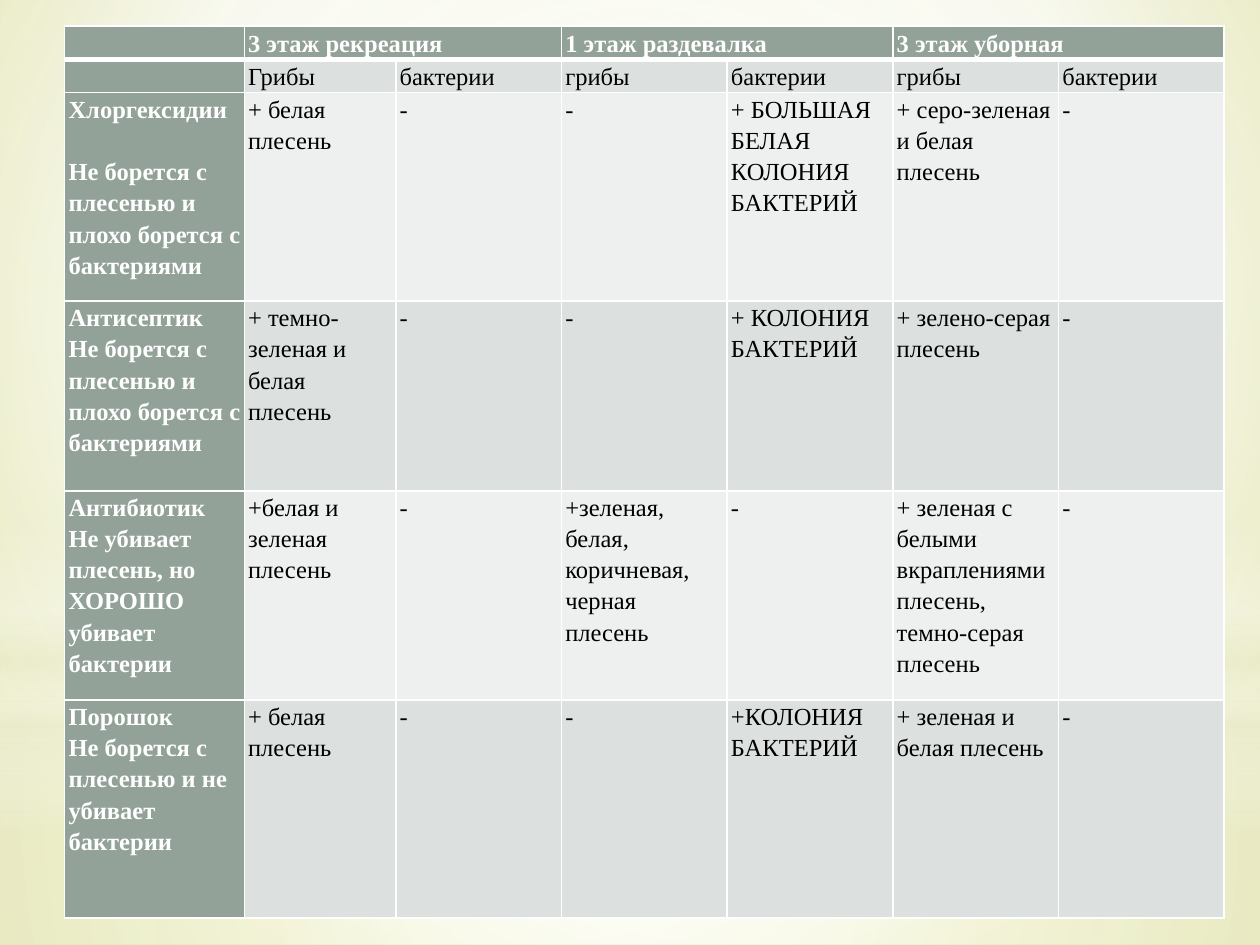
import pptx
import pptx.dml.color
import pptx.enum.shapes
import pptx.oxml
import pptx.oxml.ns
import pptx.util

Pt = pptx.util.Pt
qn = pptx.oxml.ns.qn
SHAPES = pptx.enum.shapes.MSO_SHAPE

WHITE, BLACK, SAGE, CREAM = "FFFFFF", "000000", "93A299", "ECEDD1"
BANDS = ["DCE0DE", "EEF0EF"]
FONT = "Times New Roman"
CENTRE = (50, 50, 50, 50)
MARGINS = {"margin_left": Pt(2.2), "margin_right": Pt(2.2), "margin_top": 0, "margin_bottom": 0}

COLUMN_WIDTHS = [102.6, 86.6] + [94.7] * 5
ROW_HEIGHTS = [19, 19, 119, 108.5, 119.5, 124.5]
PLACES = ["3 этаж рекреация", "1 этаж раздевалка", "3 этаж уборная"]
RESULTS = [
    ["", "Грибы", "бактерии", "грибы", "бактерии", "грибы", "бактерии"],
    ["Хлоргексидии\nНе борется с плесенью и плохо борется с бактериями",
     "+ белая плесень", "-", "-", "+ БОЛЬШАЯ БЕЛАЯ КОЛОНИЯ БАКТЕРИЙ",
     "+ серо-зеленая и белая плесень", "-"],
    ["Антисептик\nНе борется с плесенью и плохо борется с бактериями",
     "+ темно-зеленая и белая плесень", "-", "-", "+ КОЛОНИЯ БАКТЕРИЙ",
     "+ зелено-серая плесень", "-"],
    ["Антибиотик\nНе убивает плесень, но ХОРОШО убивает бактерии",
     "+белая и зеленая плесень", "-", "+зеленая, белая, коричневая, черная плесень", "-",
     "+ зеленая с белыми вкраплениями плесень, темно-серая плесень", "-"],
    ["Порошок\nНе борется с плесенью и не убивает бактерии",
     "+ белая плесень", "-", "-", "+КОЛОНИЯ БАКТЕРИЙ", "+ зеленая и белая плесень", "-"],
]
GLOWS = [
    (SHAPES.RECTANGLE, 402, 138,
     [(0, WHITE, 91), (37, WHITE, 76), (100, CREAM, 79)], CENTRE),
    (SHAPES.RECTANGLE, 0, 402,
     [(0, WHITE, 89), (48, WHITE, 62), (100, CREAM, 79)], CENTRE),
    (SHAPES.RECTANGLE, 297, 180,
     [(0, WHITE, 0), (29, WHITE, 30), (45, CREAM, 40), (55, WHITE, 26),
      (65, CREAM, 60), (100, WHITE, 0)], None),
    (SHAPES.OVAL, 126, 402, [(0, WHITE, 100), (56, WHITE, 0)], CENTRE),
]


def rgb(value):
    return pptx.dml.color.RGBColor.from_string(value)


def apply_format(target, values):
    for name, value in values.items():
        setattr(target, name, value)


def drawing_xml(tag, attributes, content):
    return pptx.oxml.parse_xml(
        f'<a:{tag} {pptx.oxml.ns.nsdecls("a")} {attributes}>{content}</a:{tag}>')


def set_gradient(fill, holder, stops, focus):
    fill.solid()
    stop_xml = "".join(
        f'<a:gs pos="{position * 1000}"><a:srgbClr val="{colour}">'
        f'<a:alpha val="{opacity * 1000}"/></a:srgbClr></a:gs>'
        for position, colour, opacity in stops)
    if focus:
        sides = " ".join(f'{side}="{share * 1000}"' for side, share in zip("ltrb", focus))
        direction = f'<a:path path="circle"><a:fillToRect {sides}/></a:path>'
    else:
        direction = '<a:lin ang="5400000" scaled="0"/>'
    gradient = drawing_xml("gradFill", 'rotWithShape="1"',
                           f"<a:gsLst>{stop_xml}</a:gsLst>{direction}")
    holder.replace(holder.find(qn("a:solidFill")), gradient)


def add_glow(slide, outline, top, height, stops, focus):
    glow = slide.shapes.add_shape(outline, 0, Pt(top), Pt(720), Pt(height))
    glow.shadow.inherit = False
    glow.line.fill.background()
    set_gradient(glow.fill, glow.element.spPr, stops, focus)


def set_borders(cell, top, bottom):
    properties = cell._tc.get_or_add_tcPr()
    widths = {"lnL": 1, "lnR": 1, "lnT": top, "lnB": bottom}
    for index, (side, width) in enumerate(widths.items()):
        properties.insert(index, drawing_xml(
            side, f'w="{Pt(width)}"',
            f'<a:solidFill><a:srgbClr val="{WHITE}"/></a:solidFill>'))


def write_cell(cell, text, fill, emphasised):
    apply_format(cell, MARGINS)
    cell.fill.solid()
    cell.fill.fore_color.rgb = rgb(fill)
    cell.text = text
    for paragraph in cell.text_frame.paragraphs:
        paragraph.line_spacing = 1.15
        for run in paragraph.runs:
            apply_format(run.font, {"name": FONT, "size": Pt(14), "bold": emphasised})
            run.font.color.rgb = rgb(WHITE if emphasised else BLACK)
        if not text:
            paragraph._p.append(drawing_xml("endParaRPr", 'sz="1400"', ""))


def add_results_table(slide):
    table = slide.shapes.add_table(
        len(ROW_HEIGHTS), len(COLUMN_WIDTHS), Pt(37), Pt(15),
        Pt(sum(COLUMN_WIDTHS)), Pt(sum(ROW_HEIGHTS))).table
    for column, width in zip(table.columns, COLUMN_WIDTHS):
        column.width = Pt(width)
    for row, height in zip(table.rows, ROW_HEIGHTS):
        row.height = Pt(height)

    header = [""] + [text for place in PLACES for text in (place, "")]
    for row_index, texts in enumerate([header] + RESULTS):
        for column_index, text in enumerate(texts):
            cell = table.cell(row_index, column_index)
            emphasised = row_index == 0 or column_index == 0
            fill = SAGE if emphasised else BANDS[(row_index - 1) % 2]
            write_cell(cell, text, fill, emphasised)
            set_borders(cell, 3 if row_index == 1 else 1, 3 if row_index == 0 else 1)
    for first in range(1, len(COLUMN_WIDTHS), 2):
        table.cell(0, first).merge(table.cell(0, first + 1))
    table.cell(2, 0).text_frame.paragraphs[1].space_before = Pt(17.8)


def main():
    presentation = pptx.Presentation()
    apply_format(presentation, {"slide_width": Pt(720), "slide_height": Pt(540)})
    slide = presentation.slides.add_slide(presentation.slide_layouts[6])
    backdrop = slide.background.fill
    backdrop.solid()
    set_gradient(backdrop, slide.element.find(".//" + qn("p:bgPr")),
                 [(0, "E9EBC1", 100), (60, WHITE, 100), (100, "DEE285", 100)],
                 (20, 10, 20, 60))
    for glow in GLOWS:
        add_glow(slide, *glow)
    add_results_table(slide)
    presentation.save("out.pptx")


if __name__ == "__main__":
    main()
